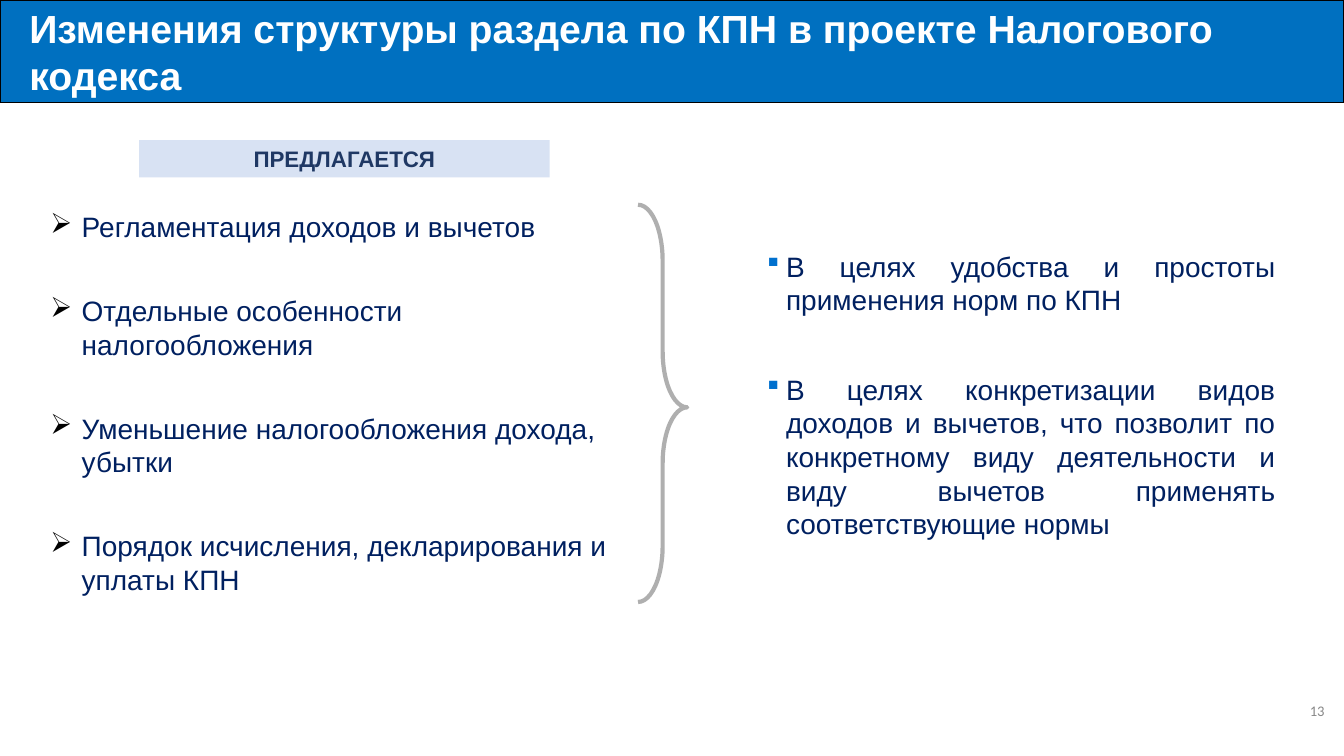
"""Build the slide on changes to the structure of the corporate income tax section."""
import pptx
import pptx.util
import pptx.dml.color
import pptx.enum.shapes
import pptx.enum.text
import pptx.oxml.ns
import lxml.etree

Cm = pptx.util.Cm
Pt = pptx.util.Pt
RGBColor = pptx.dml.color.RGBColor
MSO_SHAPE = pptx.enum.shapes.MSO_SHAPE
PP_ALIGN = pptx.enum.text.PP_ALIGN
MSO_ANCHOR = pptx.enum.text.MSO_ANCHOR
qn = pptx.oxml.ns.qn

BLUE = RGBColor(0x00, 0x70, 0xC0)
BULLET_BLUE = RGBColor(0x00, 0x70, 0xCE)
NAVY = RGBColor(0x00, 0x20, 0x60)
LABEL_NAVY = RGBColor(0x1F, 0x38, 0x64)
LABEL_FILL = RGBColor(0xD8, 0xE2, 0xF3)
GRAY = RGBColor(0x7B, 0x7B, 0x7B)
NUMBER_GRAY = RGBColor(0x88, 0x88, 0x88)
BLACK = RGBColor(0x00, 0x00, 0x00)
WHITE = RGBColor(0xFF, 0xFF, 0xFF)
ARROW_BULLET = "Ø"
SQUARE_BULLET = "§"


def write(p, text, size, color, bold=False, align=PP_ALIGN.LEFT, font="Arial"):
    p.text = text
    p.alignment = align
    p.font.name = font
    p.font.size = Pt(size)
    p.font.bold = bold
    p.font.color.rgb = color


def add_bullets(s, box, items, char, color, indent, gap, align):
    tf = s.shapes.add_textbox(*[Cm(v) for v in box]).text_frame
    tf.word_wrap = True
    for i, item in enumerate(items):
        p = tf.add_paragraph() if i else tf.paragraphs[0]
        write(p, item, 20, NAVY, align=align)
        p.space_before = Pt(gap if i else 0)
        pPr = p._p.get_or_add_pPr()
        pPr.set("marL", str(Cm(indent)))
        pPr.set("indent", str(-Cm(indent)))
        buClr = lxml.etree.Element(qn("a:buClr"))
        lxml.etree.SubElement(buClr, qn("a:srgbClr")).set("val", str(color))
        buFont = lxml.etree.Element(qn("a:buFont"), typeface="Wingdings", charset="2")
        buChar = lxml.etree.Element(qn("a:buChar"), char=char)
        defRPr = pPr.find(qn("a:defRPr"))
        for element in (buClr, buFont, buChar):
            defRPr.addprevious(element)


prs = pptx.Presentation()
prs.slide_width = Cm(33.87)
prs.slide_height = Cm(19.05)
s = prs.slides.add_slide(prs.slide_layouts[6])

header = s.shapes.add_shape(MSO_SHAPE.RECTANGLE, 0, 0, prs.slide_width, Cm(2.59))
header.shadow.inherit = False
header.fill.solid()
header.fill.fore_color.rgb = BLUE
header.line.color.rgb = BLACK
header.line.width = Pt(1)
header.text_frame.vertical_anchor = MSO_ANCHOR.MIDDLE
p = header.text_frame.paragraphs[0]
write(p, "Изменения структуры раздела по КПН в проекте Налогового кодекса", 28, WHITE, bold=True)
p._p.get_or_add_pPr().set("marL", str(Cm(0.49)))

number = s.shapes.add_textbox(Cm(30.45), Cm(16.99), Cm(3.18), Cm(1.85))
number.text_frame.word_wrap = True
number.text_frame.vertical_anchor = MSO_ANCHOR.MIDDLE
write(number.text_frame.paragraphs[0], "13", 10.5, NUMBER_GRAY,
      align=PP_ALIGN.RIGHT, font="Calibri")

proposals = [
    "Регламентация доходов и вычетов",
    "Отдельные особенности налогообложения",
    "Уменьшение налогообложения дохода, убытки",
    "Порядок исчисления, декларирования и уплаты КПН",
]
add_bullets(s, (1.02, 5.16, 15.29, 11.07), proposals, ARROW_BULLET, BLACK,
            0.79, 36, PP_ALIGN.LEFT)

goals = [
    "В целях удобства и простоты применения норм по КПН",
    "В целях конкретизации видов доходов и вычетов, что позволит по конкретному "
    "виду деятельности и виду вычетов применять соответствующие нормы",
]
add_bullets(s, (19.08, 6.15, 13.31, 7.67), goals, SQUARE_BULLET, BULLET_BLUE,
            0.48, 40, PP_ALIGN.JUSTIFY)

brace = s.shapes.add_shape(MSO_SHAPE.RIGHT_BRACE, Cm(16.08), Cm(5.16), Cm(1.24), Cm(10.01))
brace.shadow.inherit = False
brace.adjustments[0] = 1.14
brace.adjustments[1] = 0.51
brace.fill.background()
brace.line.color.rgb = GRAY
brace.line.width = Pt(3)
line_color = brace.line._ln.find(".//" + qn("a:srgbClr"))
lxml.etree.SubElement(line_color, qn("a:alpha")).set("val", "60000")

label = s.shapes.add_shape(MSO_SHAPE.RECTANGLE, Cm(3.51), Cm(3.53), Cm(10.34), Cm(0.94))
label.shadow.inherit = False
label.fill.solid()
label.fill.fore_color.rgb = LABEL_FILL
label.line.fill.background()
label.text_frame.vertical_anchor = MSO_ANCHOR.TOP
write(label.text_frame.paragraphs[0], "ПРЕДЛАГАЕТСЯ", 16, LABEL_NAVY,
      bold=True, align=PP_ALIGN.CENTER)

prs.save("out.pptx")
